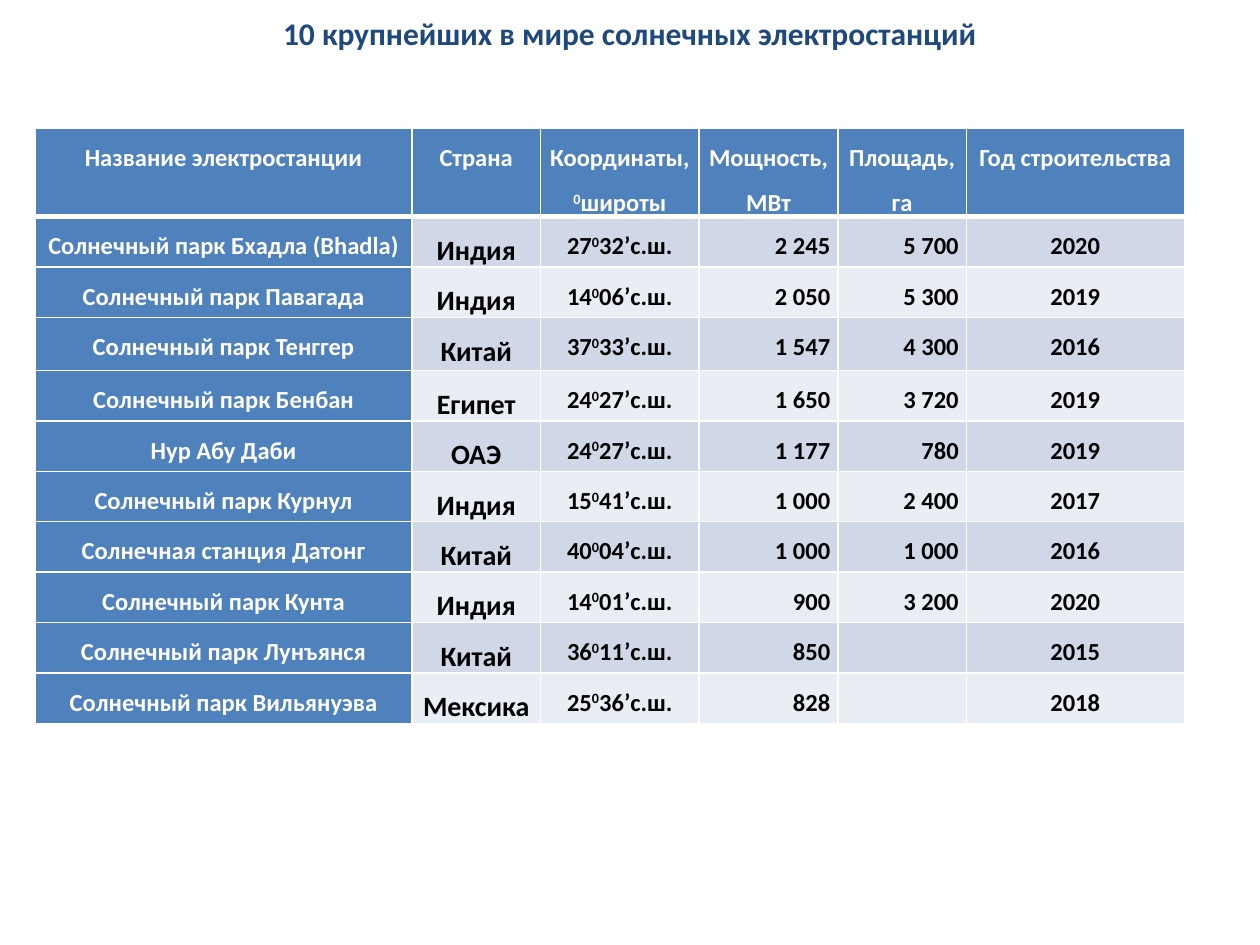
from lxml.etree import fromstring
from pptx import Presentation
from pptx.dml.color import RGBColor as Rgb
from pptx.enum.text import MSO_ANCHOR as Anchor, PP_ALIGN as Align
from pptx.util import Inches, Pt

TITLE = "10 крупнейших в мире солнечных электростанций"
HEAD = ["Название электростанции", "Страна", "Координаты, ^0^широты",
        "Мощность, МВт", "Площадь, га", "Год строительства"]
PLANTS = [
    ("Солнечный парк Бхадла (Bhadla)", "Индия", "27^0^32’с.ш.", "2 245", "5 700", "2020"),
    ("Солнечный парк Павагада", "Индия", "14^0^06’с.ш.", "2 050", "5 300", "2019"),
    ("Солнечный парк Тенггер", "Китай", "37^0^33’с.ш.", "1 547", "4 300", "2016"),
    ("Солнечный парк Бенбан", "Египет", "24^0^27’с.ш.", "1 650", "3 720", "2019"),
    ("Нур Абу Даби", "ОАЭ", "24^0^27’с.ш.", "1 177", "780", "2019"),
    ("Солнечный парк Курнул", "Индия", "15^0^41’с.ш.", "1 000", "2 400", "2017"),
    ("Солнечная станция Датонг", "Китай", "40^0^04’с.ш.", "1 000", "1 000", "2016"),
    ("Солнечный парк Кунта", "Индия", "14^0^01’с.ш.", "900", "3 200", "2020"),
    ("Солнечный парк Лунъянся", "Китай", "36^0^11’с.ш.", "850", "", "2015"),
    ("Солнечный парк Вильянуэва", "Мексика", "25^0^36’с.ш.", "828", "", "2018"),
]
WIDTHS = [2.99, 1.02, 1.26, 1.1, 1.02, 1.73]
HEIGHTS = [0.59, 0.32, 0.33, 0.42, 0.33, 0.33, 0.32, 0.32, 0.32, 0.32, 0.22]
BLUE, NAVY, WHITE, BLACK = "4F81BD", "1F497D", "FFFFFF", "000000"
BANDS = ["E9EDF4", "D0D8E8"]
SPACE = "http://schemas.openxmlformats.org/drawingml/2006/main"


def color(code):
    """Turn a hex string into a colour."""
    return Rgb.from_string(code)


def write(frame, text, size=14, ink=BLACK, align=Align.CENTER, lead=None):
    """Write bold text, raising the parts held between carets."""
    para = frame.paragraphs[0]
    para.alignment = align
    if lead:
        para.line_spacing = lead
    for i, part in enumerate(text.split("^")):
        run = para.add_run()
        run.text = part
        font = run.font
        font.name, font.size, font.bold = "Calibri", Pt(size), True
        font.color.rgb = color(ink)
        if i % 2:
            run._r.get_or_add_rPr().set("baseline", "30000")


def rule(cell, top, base):
    """Draw white borders, with top and base widths in points."""
    props = cell._tc.get_or_add_tcPr()
    for i, (side, width) in enumerate(zip("LRTB", (1, 1, top, base))):
        props.insert(i, fromstring(
            f'<a:ln{side} xmlns:a="{SPACE}" w="{Pt(width)}"><a:solidFill>'
            f'<a:srgbClr val="{WHITE}"/></a:solidFill></a:ln{side}>'))


def fill_cell(cell, text, row, col):
    """Format one cell by its place in the grid."""
    label = row == 0 or col == 0
    cell.margin_left = cell.margin_right = Inches(0.06)
    cell.margin_top = cell.margin_bottom = 0
    cell.fill.solid()
    cell.fill.fore_color.rgb = color(BLUE if label else BANDS[row % 2])
    rule(cell, 3 if row == 1 else 1, 3 if row == 0 else 1)
    write(cell.text_frame, text, lead=1.5,
          size=16 if row and col == 1 else 14,
          ink=WHITE if label else BLACK,
          align=Align.RIGHT if row and col in (3, 4) else Align.CENTER)


def main():
    """Build the slide and save it."""
    deck = Presentation()
    deck.slide_width, deck.slide_height = Inches(10), Inches(7.5)
    slide = deck.slides.add_slide(deck.slide_layouts[6])

    box = slide.shapes.add_textbox(Inches(0.5), Inches(0.03), Inches(9), Inches(0.46))
    box.text_frame.word_wrap = True
    box.text_frame.vertical_anchor = Anchor.MIDDLE
    write(box.text_frame, TITLE, size=18, ink=NAVY)

    rows = [HEAD, *PLANTS]
    frame = slide.shapes.add_table(len(rows), len(HEAD), Inches(0.28), Inches(1.02),
                                   Inches(9.13), Inches(4.72))
    table = frame.table
    for col, width in zip(table.columns, WIDTHS):
        col.width = Inches(width)
    for row, height in zip(table.rows, HEIGHTS):
        row.height = Inches(height)
    frame.height = Inches(4.72)
    for r, row in enumerate(rows):
        for c, text in enumerate(row):
            fill_cell(table.cell(r, c), text, r, c)

    deck.save("out.pptx")


if __name__ == "__main__":
    main()
